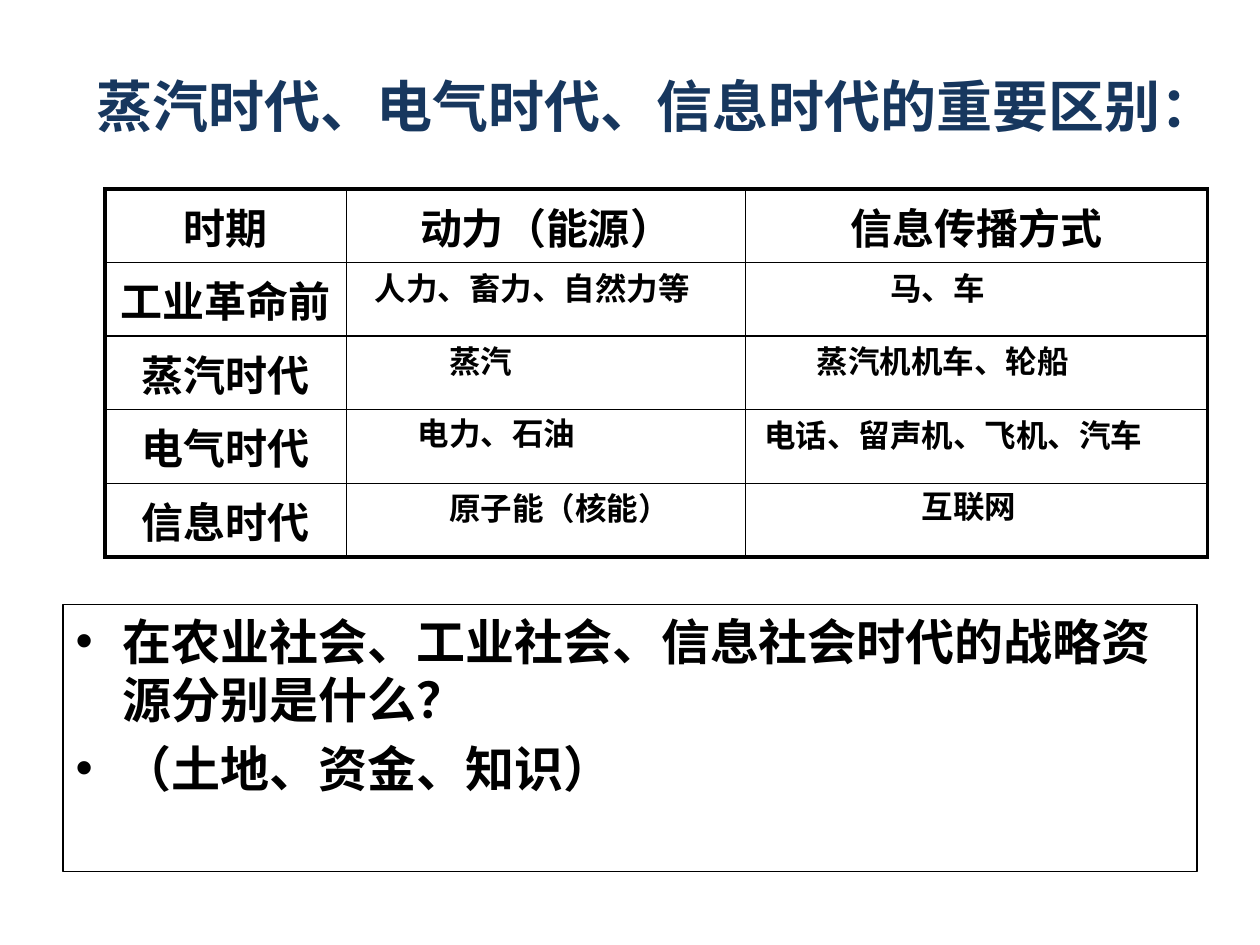
from lxml.etree import SubElement
from pptx import Presentation
from pptx.dml.color import RGBColor
from pptx.enum.text import MSO_ANCHOR as Anchor, MSO_AUTO_SIZE as Fit, PP_ALIGN as Align
from pptx.oxml.ns import qn
from pptx.util import Inches, Pt

COLS, ROWS = 120, 90
BLACK, NAVY = "000000", "17375E"
HEADS = ["时期", "动力（能源）", "信息传播方式"]
ERAS = ["工业革命前", "蒸汽时代", "电气时代", "信息时代"]
# text, left column, top row
ANSWERS = [
    ("人力、畜力、自然力等", 34.5, 25), ("马、车", 83.6, 25),
    ("蒸汽", 41.6, 32), ("蒸汽机机车、轮船", 76.6, 32),
    ("电力、石油", 38.6, 38.8), ("电话、留声机、飞机、汽车", 71.6, 39),
    ("原子能（核能）", 41.6, 46), ("互联网", 86.6, 45.8),
]
POINTS = ["在农业社会、工业社会、信息社会时代的战略资源分别是什么？", "（土地、资金、知识）"]


def color(code):
    return RGBColor.from_string(code)


def edge(cell, sides):
    """Draw the cell's borders; sides maps L, R, T, B to points."""
    props = cell._tc.get_or_add_tcPr()
    for spot, (side, width) in enumerate(sides.items()):
        line = SubElement(props, qn(f"a:ln{side}"), w=str(Pt(width)))
        fill = SubElement(line, qn("a:solidFill"))
        SubElement(fill, qn("a:srgbClr"), val=BLACK)
        props.insert(spot, line)


class Deck:
    """Holds the style, the grid and the current slide."""
    font = "Arial"
    thick, thin = 2.25, 1

    def __init__(self):
        self.prs = Presentation()
        self.prs.slide_width, self.prs.slide_height = Inches(10), Inches(7.5)
        self.slide = self.prs.slides.add_slide(self.prs.slide_layouts[1])

    def x(self, cols):
        return int(self.prs.slide_width * cols / COLS)

    def y(self, rows):
        return int(self.prs.slide_height * rows / ROWS)

    def box(self, left, top, width, height):
        return self.x(left), self.y(top), self.x(width), self.y(height)

    def place(self, shape, *area):
        shape.left, shape.top, shape.width, shape.height = self.box(*area)

    def style(self, para, size, code=BLACK, font=None):
        para.font.name, para.font.size = font or self.font, Pt(size)
        para.font.bold, para.font.color.rgb = True, color(code)

    def title(self, text, *area):
        shape = self.slide.shapes.title
        self.place(shape, *area)
        frame = shape.text_frame
        frame.text, frame.word_wrap = text, False
        frame.auto_size = Fit.NONE
        para = frame.paragraphs[0]
        para.alignment = Align.LEFT
        self.style(para, 32, NAVY)

    def body(self, lines, *area):
        shape = self.slide.placeholders[1]
        self.place(shape, *area)
        shape.line.color.rgb, shape.line.width = color(BLACK), Pt(0.75)
        frame = shape.text_frame
        frame.text, frame.auto_size = "\n".join(lines), Fit.NONE
        for para in frame.paragraphs:
            self.style(para, 28, font="Calibri")

    def table(self, heads, names, left, top, widths, high):
        """Grid with a head row and a name column; the rest stays open."""
        rows, cols = len(names) + 1, len(heads)
        area = self.box(left, top, sum(widths), high * rows)
        grid = self.slide.shapes.add_table(rows, cols, *area).table
        grid.first_row = grid.horz_banding = False
        for col, width in zip(grid.columns, widths):
            col.width = self.x(width)
        for r, row in enumerate(grid.rows):
            row.height = self.y(high)
            for c, cell in enumerate(row.cells):
                cell.fill.background()
                outer = {"L": c == 0, "R": c == cols - 1, "T": r == 0, "B": r == rows - 1}
                edge(cell, {s: self.thick if out else self.thin for s, out in outer.items()})
                if r == 0 or c == 0:
                    cell.text = heads[c] if r == 0 else names[r - 1]
                    cell.vertical_anchor = Anchor.MIDDLE
                    para = cell.text_frame.paragraphs[0]
                    para.alignment, para.space_before = Align.CENTER, Pt(4.8)
                    self.style(para, 24)

    def label(self, text, left, top):
        """One unwrapped line, as wide as its count of letters."""
        area = self.box(left, top, 3.3 * len(text) + 2.4, 5.2)
        frame = self.slide.shapes.add_textbox(*area).text_frame
        frame.text, frame.word_wrap = text, False
        frame.auto_size = Fit.SHAPE_TO_FIT_TEXT
        self.style(frame.paragraphs[0], 18)


def main():
    deck = Deck()
    deck.title("蒸汽时代、电气时代、信息时代的重要区别：", 8, 6.2, 110, 7.7)
    deck.body(POINTS, 6, 57.6, 108, 25.4)
    deck.table(HEADS, ERAS, 10, 18, [23, 38, 44], 7)
    for answer in ANSWERS:
        deck.label(*answer)
    deck.prs.save("out.pptx")


if __name__ == "__main__":
    main()
